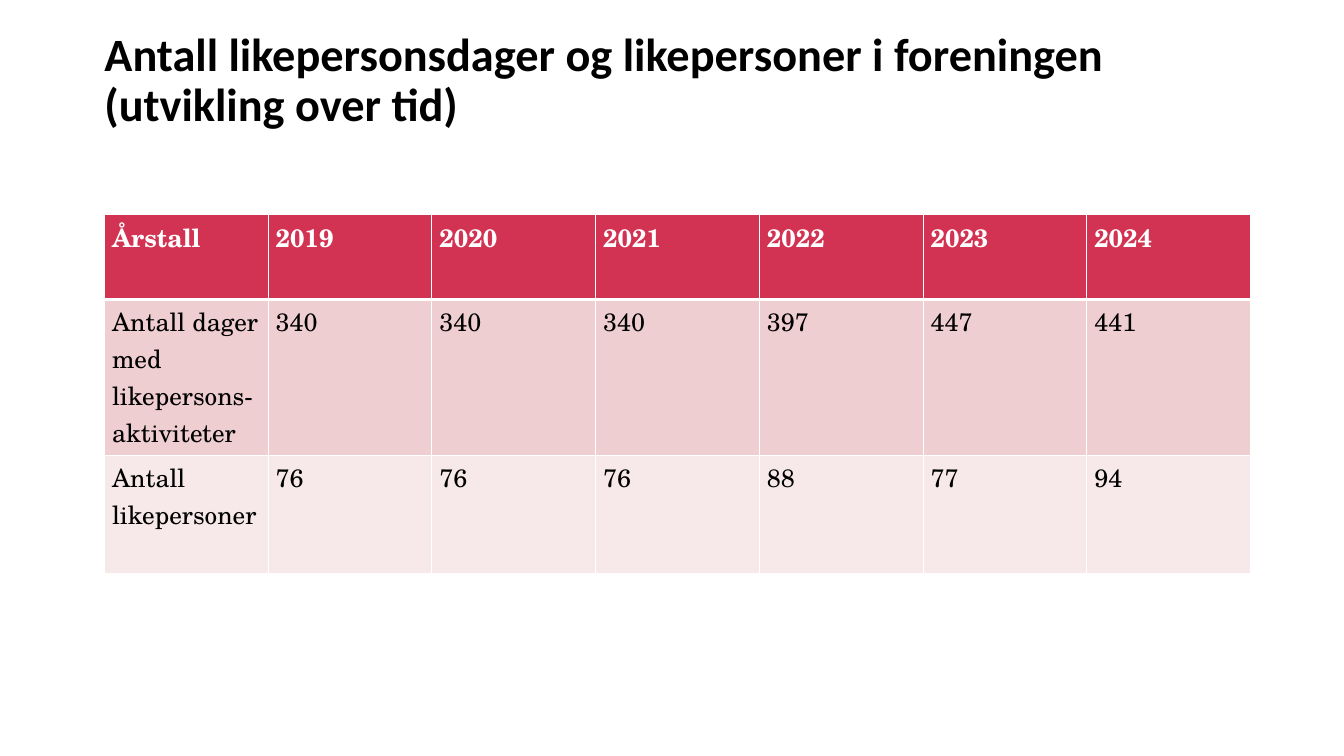
from dataclasses import dataclass

from lxml import etree
from pptx import Presentation
from pptx.dml.color import RGBColor
from pptx.enum import text
from pptx.oxml import ns
from pptx.util import Cm, Pt


@dataclass(frozen=True)
class Theme:
    """Colours, fonts and type sizes of the slide."""
    header: str = "D33352"
    bands: tuple = ("EFCED1", "F7E8E9")
    light: str = "FFFFFF"
    dark: str = "000000"
    title_font: str = "Calibri"
    table_font: str = "TeX Gyre Schola"
    title_size: float = 44.1
    table_size: float = 24
    thin: float = 1
    thick: float = 3


THEME = Theme()
ROWS = [
    ["Årstall", "2019", "2020", "2021", "2022", "2023", "2024"],
    ["Antall dager med likepersons-aktiviteter", "340", "340", "340", "397", "447", "441"],
    ["Antall likepersoner", "76", "76", "76", "88", "77", "94"],
]
ROW_HEIGHTS = [2.86, 5.24, 3.97]


def set_font(p, name, size, color, bold):
    """Format a whole paragraph."""
    p.font.name = name
    p.font.size = Pt(size)
    p.font.bold = bold
    p.font.color.rgb = RGBColor.from_string(color)


def set_border(cell, side, width):
    """Draw one side of a cell as a solid line."""
    tc_pr = cell._tc.get_or_add_tcPr()
    ln = etree.SubElement(tc_pr, ns.qn(f"a:ln{side}"), w=str(Pt(width)))
    fill = etree.SubElement(ln, ns.qn("a:solidFill"))
    etree.SubElement(fill, ns.qn("a:srgbClr"), val=THEME.light)


def add_title(s, left, top, width, height):
    """Place and format the title in its box."""
    sp = s.shapes.title
    sp.left, sp.top, sp.width, sp.height = Cm(left), Cm(top), Cm(width), Cm(height)
    tf = sp.text_frame
    tf.word_wrap = True
    tf.auto_size = text.MSO_AUTO_SIZE.NONE
    tf.vertical_anchor = text.MSO_ANCHOR.BOTTOM
    tf.margin_left = tf.margin_right = tf.margin_top = 0
    tf.margin_bottom = Cm(1.39)
    p = tf.paragraphs[0]
    p.text = "Antall likepersonsdager og likepersoner i foreningen\v(utvikling over tid)"
    p.alignment = text.PP_ALIGN.LEFT
    p.line_spacing = 0.9
    set_font(p, THEME.title_font, THEME.title_size, THEME.dark, True)


def format_cell(cell, value, row):
    """Fill in one cell according to its row."""
    is_header = row == 0
    for side in "LRTB":
        under_header = (row, side) in ((0, "B"), (1, "T"))
        set_border(cell, side, THEME.thick if under_header else THEME.thin)
    cell.fill.solid()
    fill = THEME.header if is_header else THEME.bands[(row - 1) % 2]
    cell.fill.fore_color.rgb = RGBColor.from_string(fill)
    p = cell.text_frame.paragraphs[0]
    p.text = value
    color = THEME.light if is_header else THEME.dark
    set_font(p, THEME.table_font, THEME.table_size, color, is_header)


def add_year_table(s, left, top, width):
    """Place the yearly figures in equal columns."""
    n_cols = len(ROWS[0])
    frame = s.shapes.add_table(len(ROWS), n_cols, Cm(left), Cm(top),
                               Cm(width), Cm(sum(ROW_HEIGHTS)))
    table = frame.table
    for column in table.columns:
        column.width = Cm(width / n_cols)
    for i, (values, height) in enumerate(zip(ROWS, ROW_HEIGHTS)):
        table.rows[i].height = Cm(height)
        for j, value in enumerate(values):
            format_cell(table.cell(i, j), value, i)


def main():
    """Build and save the presentation."""
    prs = Presentation()
    prs.slide_width, prs.slide_height = Cm(45.16), Cm(25.4)
    s = prs.slides.add_slide(prs.slide_layouts[5])
    left, width = 3.51, 38.51
    add_title(s, left, 0.81, width, 5)
    add_year_table(s, left, 7.19, width)
    prs.save("out.pptx")


if __name__ == "__main__":
    main()
